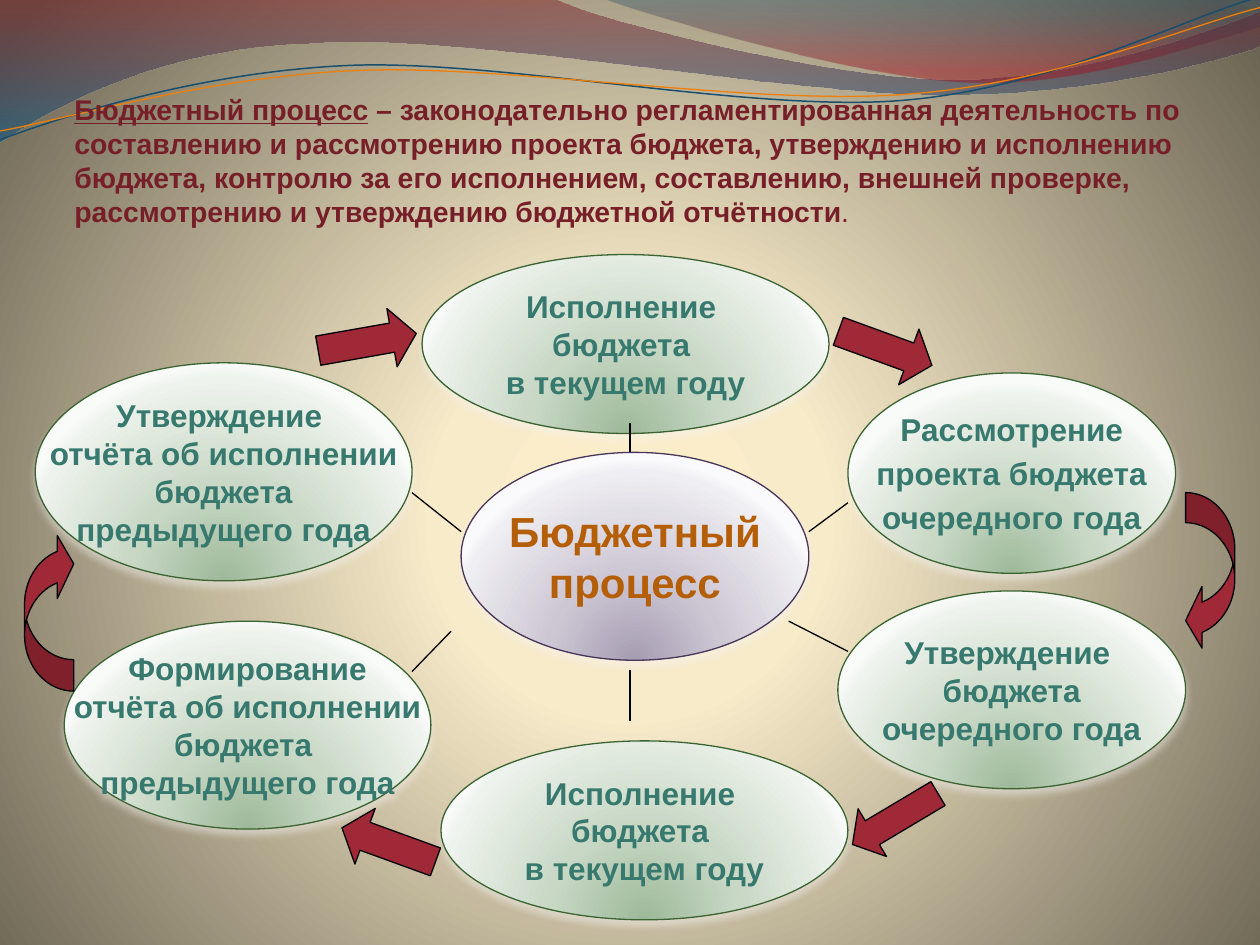
from dataclasses import dataclass
from typing import Optional

from lxml import etree
from pptx import Presentation, util as u
from pptx.dml.color import RGBColor
from pptx.enum import shapes, text
from pptx.oxml import ns

COLOURS = {
    "title": "771F28", "label": "37796E", "core_label": "B45F07",
    "arrow": "9F2936", "black": "000000", "blue": "184E6D", "orange": "F07F09",
    "stage_line": "396330", "core_line": "473559", "glow": "F6F4F2",
}
BACKDROP = [(0, "FEEEC7", 100), (25, "F8EBCA", 100), (100, "6C6553", 100)]
STAGE_FILL = [(0, "9EB99A", 100), (43, "C8D8C5", 100), (93, "EEF3ED", 100), (100, "F9FBF9", 100)]
CORE_FILL = [(0, "A69DB2", 100), (43, "CDC7D4", 100), (93, "EFEEF2", 100), (100, "FAF9FB", 100)]
COLUMNS, ROWS = 100, 75
Stops = list[tuple[int, str, int]]
Point = tuple[float, float]

deck = Presentation()
deck.slide_width, deck.slide_height = u.Inches(10), u.Inches(7.5)
page = deck.slides.add_slide(deck.slide_layouts[6])


@dataclass
class Area:
    column: float
    row: float
    columns: float
    rows: float

    def box(self) -> tuple[int, int, int, int]:
        return (*place(self.column, self.row), *place(self.columns, self.rows))


@dataclass
class Oval:
    area: Area
    lines: list[str]
    kind: str = "stage"
    space: float = 0


@dataclass
class Arrow:
    area: Area
    turn: float
    preset: shapes.MSO_SHAPE = shapes.MSO_SHAPE.RIGHT_ARROW
    adjust: tuple[float, ...] = (0.5, 0.416)


@dataclass
class Wave:
    start: Point
    segments: list[list[Point]]
    stops: Optional[Stops] = None
    line: str = ""
    width: float = 0


def place(column: float, row: float) -> tuple[int, int]:
    return round(column * deck.slide_width / COLUMNS), round(row * deck.slide_height / ROWS)


def rgb(name: str) -> RGBColor:
    return RGBColor.from_string(COLOURS[name])


def add_node(parent, tag: str, **attributes):
    node = etree.SubElement(parent, ns.qn(tag))
    for key, value in attributes.items():
        node.set(key, str(value))
    return node


def add_colour(parent, value: str, opacity: int) -> None:
    node = add_node(parent, "a:srgbClr", val=value)
    if opacity < 100:
        add_node(node, "a:alpha", val=opacity * 1000)


def paint_gradient(fill, holder, stops: Stops, focus=None) -> None:
    fill.solid()
    solid = holder.find(ns.qn("a:solidFill"))
    gradient = etree.Element(ns.qn("a:gradFill"), rotWithShape="1")
    listing = add_node(gradient, "a:gsLst")
    for position, value, opacity in stops:
        add_colour(add_node(listing, "a:gs", pos=position * 1000), value, opacity)
    if focus:
        sides = {side: share * 1000 for side, share in zip("ltrb", focus)}
        add_node(add_node(gradient, "a:path", path="circle"), "a:fillToRect", **sides)
    else:
        add_node(gradient, "a:lin", ang=5400000, scaled=1)
    holder.replace(solid, gradient)


def add_span(para, words: str, size: float, colour: str, bold: bool = True, underline: bool = False) -> None:
    span = para.add_run()
    span.text = words
    span.font.name, span.font.size = "Arial", u.Pt(size)
    span.font.bold, span.font.underline = bold, underline
    span.font.color.rgb = rgb(colour)


def bend_segments(shape, segments: list[list[Point]]) -> None:
    steps = iter(list(shape._element.iter(ns.qn("a:lnTo"))))
    for segment in segments:
        nodes = [next(steps) for _ in segment]
        if len(nodes) == 3:
            curve = etree.Element(ns.qn("a:cubicBezTo"))
            nodes[0].addprevious(curve)
            for node in nodes:
                curve.append(node[0])
                node.getparent().remove(node)


def draw_wave(wave: Wave) -> None:
    points = [wave.start] + [point for segment in wave.segments for point in segment]
    outline = [place(x * 10, y * 10) for x, y in points]
    builder = page.shapes.build_freeform(*outline[0])
    builder.add_line_segments(outline[1:], close=wave.stops is not None)
    shape = builder.convert_to_shape()
    bend_segments(shape, wave.segments)
    shape.shadow.inherit = False
    if wave.stops:
        paint_gradient(shape.fill, shape._element.spPr, wave.stops)
        shape.line.fill.background()
    else:
        shape.fill.background()
        shape.line.color.rgb, shape.line.width = rgb(wave.line), u.Pt(wave.width)


def draw_oval(oval: Oval) -> None:
    core = oval.kind == "core"
    shape = page.shapes.add_shape(shapes.MSO_SHAPE.OVAL, *oval.area.box())
    properties = shape._element.spPr
    paint_gradient(shape.fill, properties, CORE_FILL if core else STAGE_FILL, (50, 130, 50, -30))
    shape.line.color.rgb, shape.line.width = rgb(oval.kind + "_line"), u.Pt(0.75)
    shape.shadow.inherit = False
    shade = add_node(properties.find(ns.qn("a:effectLst")), "a:outerShdw", blurRad=u.Pt(4.5),
                     dist=u.Pt(3), dir=5400000, rotWithShape=0)
    add_colour(shade, COLOURS["glow"], 48)
    frame = shape.text_frame
    frame.word_wrap, frame.vertical_anchor = False, text.MSO_ANCHOR.MIDDLE
    for index, words in enumerate(oval.lines):
        para = frame.add_paragraph() if index else frame.paragraphs[0]
        para.alignment = text.PP_ALIGN.CENTER
        para.space_before = u.Pt(oval.space)
        add_span(para, words, 24 if core else 18, "core_label" if core else "label")


def draw_arrow(arrow: Arrow) -> None:
    shape = page.shapes.add_shape(arrow.preset, *arrow.area.box())
    shape.rotation = arrow.turn
    for index, value in enumerate(arrow.adjust):
        shape.adjustments[index] = value
    shape.fill.solid()
    shape.fill.fore_color.rgb = rgb("arrow")
    shape.line.color.rgb, shape.line.width = rgb("black"), u.Pt(0.75)
    shape.shadow.inherit = False


def draw_spoke(start: Point, end: Point) -> None:
    spoke = page.shapes.add_connector(shapes.MSO_CONNECTOR.STRAIGHT, *place(*start), *place(*end))
    spoke.line.color.rgb, spoke.line.width = rgb("black"), u.Pt(0.75)
    add_node(spoke._element.spPr, "a:effectLst")


def draw_title() -> None:
    box = page.shapes.add_textbox(*Area(5.9, 8.4, 89.9, 11.8).box())
    frame = box.text_frame
    frame.word_wrap, frame.vertical_anchor = True, text.MSO_ANCHOR.BOTTOM
    frame.margin_left = frame.margin_right = frame.margin_top = 0
    frame.margin_bottom = u.Inches(0.21)
    para = frame.paragraphs[0]
    add_span(para, "Бюджетный процесс", 16.2, "title", underline=True)
    add_span(para, " – законодательно регламентированная деятельность по составлению и рассмотрению "
             "проекта бюджета, утверждению и исполнению бюджета, контролю за его исполнением, составлению, "
             "внешней проверке, рассмотрению и утверждению бюджетной отчётности", 16.2, "title")
    add_span(para, ".", 16.2, "title", bold=False)


WAVES = [
    Wave((0, 0), [[(4.4, -0.01)], [(4.76, 0.17), (6.64, 0.63), (7.58, 0.63)],
                  [(8.53, 0.63), (9.58, 0.26), (10, 0.09)], [(10.01, 0.36)],
                  [(9.83, 0.44), (8.7, 0.76), (7.46, 0.75)], [(6.22, 0.75), (3.82, 0.28), (2.57, 0.34)],
                  [(1.29, 0.36), (0.46, 0.83), (-0.01, 1.13)]], [(0, "7E1621", 45), (100, "005689", 55)]),
    Wave((4.79, -0.01), [[(5.09, 0.11), (6.82, 0.62), (7.69, 0.65)], [(8.56, 0.69), (9.61, 0.32), (10, 0.21)],
                         [(10, 0)]], [(0, "094467", 30), (80, "A10F1F", 45)]),
    Wave((0, 1.11), [[(0.48, 0.93), (1.58, 0.57), (2.77, 0.52)], [(3.95, 0.47), (5.93, 0.89), (7.13, 0.8)],
                     [(8.33, 0.71), (9.38, 0.15), (9.98, -0.02)]], line="blue", width=0.85),
    Wave((0, 1.04), [[(0.47, 0.96), (1.64, 0.61), (2.83, 0.56)], [(4.03, 0.51), (5.97, 0.84), (7.17, 0.75)],
                     [(8.36, 0.67), (9.41, 0.21), (10, 0.06)]], line="orange", width=0.75),
]
EXECUTION = ["Исполнение ", "бюджета ", "в текущем году"]
OVALS = [
    Oval(Area(67.3, 29.6, 26, 15.9), ["Рассмотрение", "проекта бюджета", "очередного года"], space=3.6),
    Oval(Area(66.5, 46.9, 27.6, 15.7), ["Утверждение ", "бюджета", "очередного года"]),
    Oval(Area(35, 58.8, 32.3, 14.2), EXECUTION),
    Oval(Area(33.5, 20.2, 32.3, 14.2), EXECUTION),
    Oval(Area(36.6, 35.9, 27.6, 16.5), ["Бюджетный", "процесс"], "core"),
    Oval(Area(2.8, 28.8, 29.9, 17.3), ["Утверждение ", "отчёта об исполнении", " бюджета ", "предыдущего года"]),
    Oval(Area(5.1, 49.3, 29.1, 16.5), ["Формирование", "отчёта об исполнении", "бюджета ", "предыдущего года"]),
]
ARROWS = [
    Arrow(Area(94.1, 39.1, 3.9, 12.6), 0, shapes.MSO_SHAPE.CURVED_LEFT_ARROW, (0.613, 1.253, 0.333)),
    Arrow(Area(67.1, 62.8, 7.9, 4.4), 149.2),
    Arrow(Area(25.2, 24.8, 7.9, 4.7), 350),
    Arrow(Area(66.3, 25.3, 7.9, 4.7), 20),
    Arrow(Area(26.9, 64.7, 7.9, 4.7), 200),
    Arrow(Area(-2.4, 46.6, 12.6, 3.9), 270, shapes.MSO_SHAPE.CURVED_DOWN_ARROW, (0.64, 1.279, 0.333)),
]
SPOKES = [
    ((50, 53.2), (50, 57.2)), ((35.8, 50.1), (32.7, 53.3)), ((32.7, 39.1), (36.6, 42.2)),
    ((50, 33.6), (50, 35.9)), ((64.2, 42.2), (67.3, 39.9)), ((62.6, 49.3), (67.3, 51.7)),
]

paint_gradient(page.background.fill, page._element.cSld.bg.bgPr, BACKDROP, (10, 110, 10, 100))
for draw, items in ((draw_wave, WAVES), (draw_oval, OVALS), (draw_arrow, ARROWS)):
    for item in items:
        draw(item)
for spoke in SPOKES:
    draw_spoke(*spoke)
draw_title()
deck.save("out.pptx")
